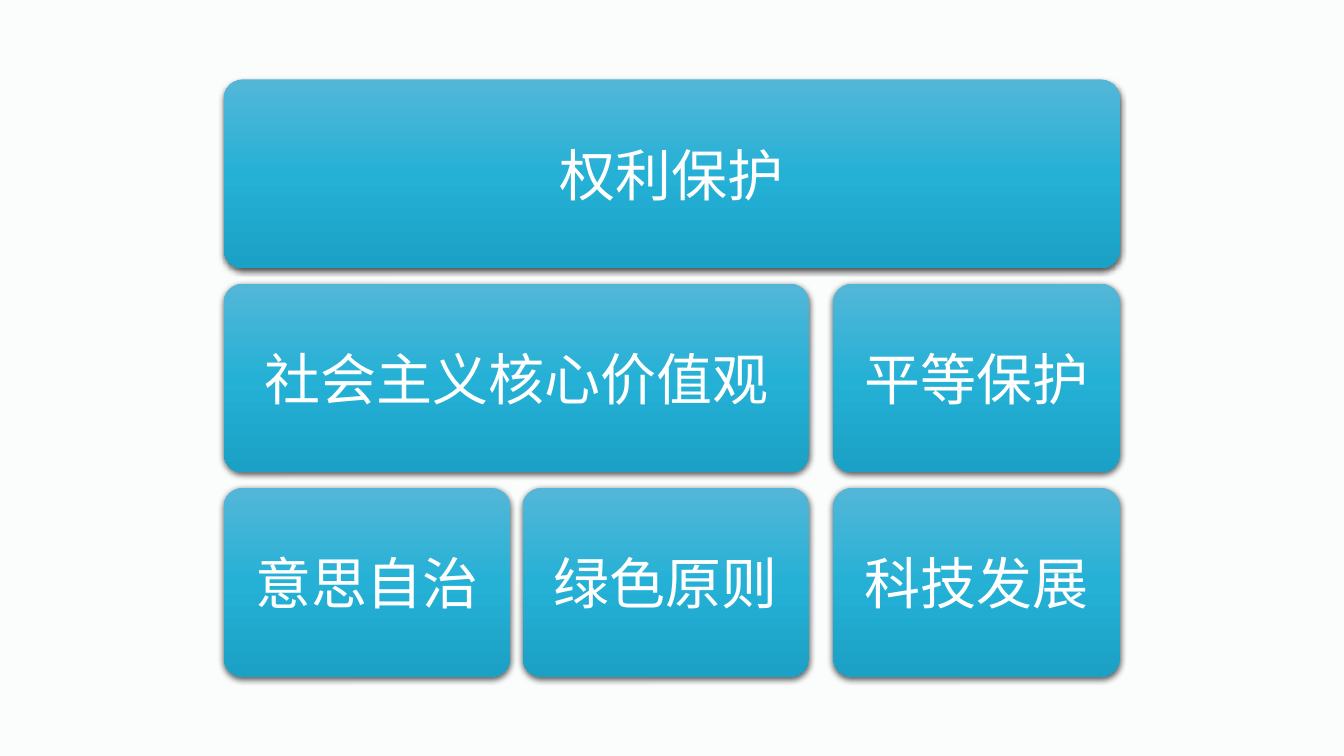
from dataclasses import dataclass

from lxml.etree import SubElement
from pptx import Presentation
from pptx.dml.color import RGBColor
from pptx.enum.shapes import MSO_SHAPE
from pptx.enum.text import MSO_ANCHOR, PP_ALIGN
from pptx.oxml.ns import qn
from pptx.util import Cm, Pt


@dataclass(frozen=True)
class Theme:
    background: str = "FBFCFC"
    gradient: tuple = ((0, "53B6D7"), (50, "25B1D6"), (100, "1AA1C5"))
    shadow: str = "000000"
    text: str = "FFFFFF"
    font: str = "Arial"
    size: int = 40


THEME = Theme()

# Each row lists its labels with the first and last column they cover.
PRINCIPLES = (
    (("权利保护", 0, 2),),
    (("社会主义核心价值观", 0, 1), ("平等保护", 2, 2)),
    (("意思自治", 0, 0), ("绿色原则", 1, 1), ("科技发展", 2, 2)),
)
COLUMN_GAPS = (0.31, 0.61)
ROW_GAP = 0.39


def add_color(parent, color):
    return SubElement(parent, qn("a:srgbClr"), val=color)


def fill_gradient(shape):
    shape.fill.gradient()
    shape.fill.gradient_angle = 270
    stops = shape.element.spPr.find(qn("a:gradFill")).find(qn("a:gsLst"))
    for stop in list(stops):
        stops.remove(stop)
    for position, color in THEME.gradient:
        add_color(SubElement(stops, qn("a:gs"), pos=str(position * 1000)), color)


def drop_shadow(shape):
    shape.shadow.inherit = False
    effects = shape.element.spPr.find(qn("a:effectLst"))
    shadow = SubElement(effects, qn("a:outerShdw"), blurRad=str(Pt(4.5)),
                        dist=str(Pt(1.5)), dir="5400000", algn="ctr",
                        rotWithShape="0")
    SubElement(add_color(shadow, THEME.shadow), qn("a:alpha"), val="63000")


def add_block(slide, label, left, top, width, height):
    block = slide.shapes.add_shape(MSO_SHAPE.ROUNDED_RECTANGLE, Cm(left), Cm(top),
                                   Cm(width), Cm(height))
    block.adjustments[0] = 0.1
    block.line.fill.background()
    fill_gradient(block)
    drop_shadow(block)

    frame = block.text_frame
    frame.word_wrap = True
    frame.vertical_anchor = MSO_ANCHOR.MIDDLE
    frame.margin_left = frame.margin_right = Cm(0.42)
    frame.margin_top = frame.margin_bottom = Cm(0.42)
    paragraph = frame.paragraphs[0]
    paragraph.alignment = PP_ALIGN.CENTER
    run = paragraph.add_run()
    run.text = label
    run.font.name = THEME.font
    run.font.size = Pt(THEME.size)
    run.font.color.rgb = RGBColor.from_string(THEME.text)


def add_principles(slide, left, top, width, height):
    """Stack the rows so that they fill the box, on three equal columns."""
    column_width = (width - sum(COLUMN_GAPS)) / 3
    row_height = (height - 2 * ROW_GAP) / 3
    starts = [left + i * column_width + sum(COLUMN_GAPS[:i]) for i in range(3)]
    for row, blocks in enumerate(PRINCIPLES):
        row_top = top + row * (row_height + ROW_GAP)
        for label, first, last in blocks:
            block_width = starts[last] + column_width - starts[first]
            add_block(slide, label, starts[first], row_top, block_width, row_height)


def main():
    presentation = Presentation()
    presentation.slide_width = Cm(33.87)
    presentation.slide_height = Cm(19.05)
    slide = presentation.slides.add_slide(presentation.slide_layouts[6])
    slide.background.fill.solid()
    slide.background.fill.fore_color.rgb = RGBColor.from_string(THEME.background)
    add_principles(slide, left=5.64, top=2, width=22.58, height=15.05)
    presentation.save("out.pptx")


if __name__ == "__main__":
    main()
